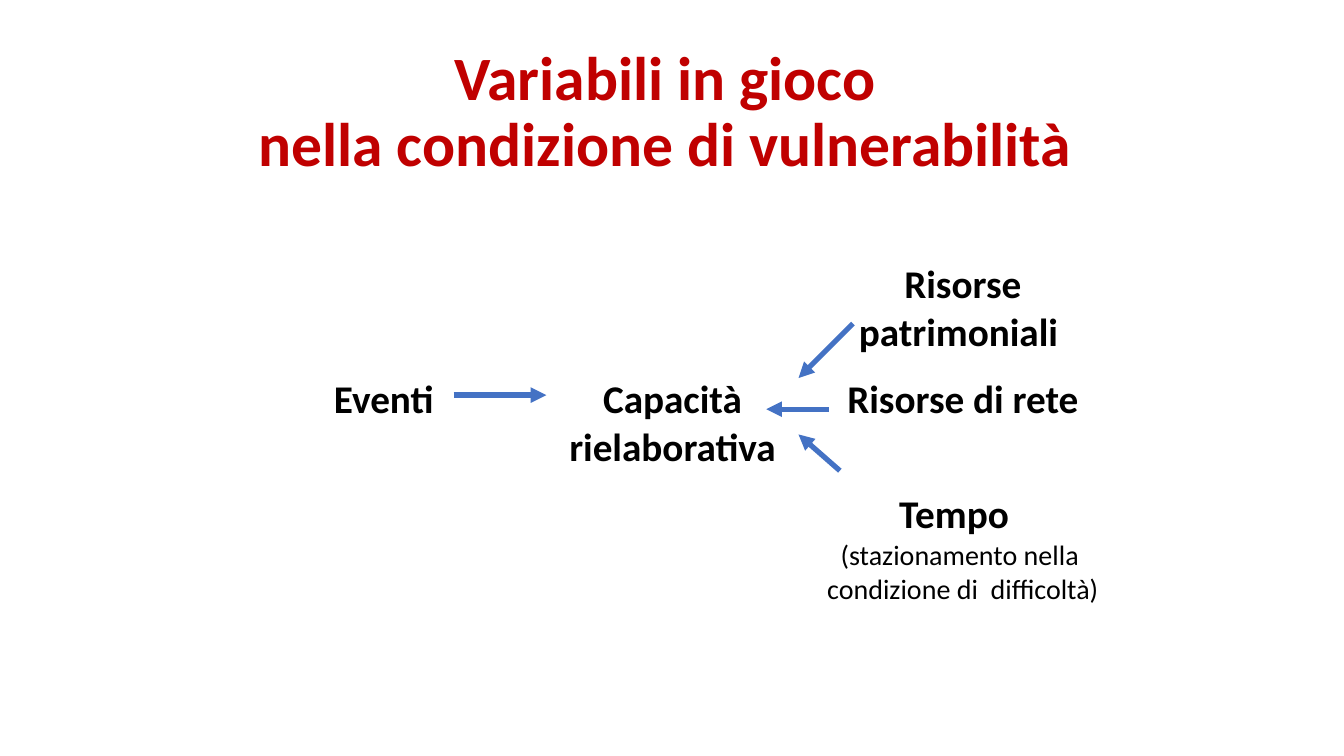
from pptx import Presentation
from pptx.dml.color import RGBColor
from pptx.enum import shapes, text
from pptx.oxml.ns import qn
from pptx.util import Inches, Pt
from lxml import etree

COLORS = {"title": "C00000", "text": "000000", "arrow": "4472C4"}
FONT = "Calibri"

COLS = (2.76, 2.88, 2.88)
ROWS = (1.14, 1.14, 1.24)
# (row, column): paragraphs as (wording, size, bold)
CELLS = {
    (0, 2): [("Risorse patrimoniali ", 28, True)],
    (1, 0): [("Eventi ", 28, True)],
    (1, 1): [("Capacità rielaborativa", 28, True)],
    (1, 2): [("Risorse di rete", 28, True)],
    (2, 2): [("Tempo  ", 28, True),
             ("(stazionamento nella  condizione di  difficoltà)", 20, False)],
}
ARROWS = (
    ((8.46, 3.21), (7.92, 3.75)),
    ((8.22, 4.06), (7.6, 4.06)),
    ((8.33, 4.67), (7.92, 4.31)),
    ((4.5, 3.92), (5.42, 3.92)),
)


def style(para, size, bold, color):
    para.alignment = text.PP_ALIGN.CENTER
    form = {"name": FONT, "size": Pt(size), "bold": bold}
    for run in para.runs:
        for key, value in form.items():
            setattr(run.font, key, value)
        run.font.color.rgb = RGBColor.from_string(COLORS[color])


def add_title(slide, words):
    title = slide.shapes.title
    box = {"left": 0.92, "top": 0.4, "width": 11.5, "height": 1.45}
    for key, value in box.items():
        setattr(title, key, Inches(value))
    frame = title.text_frame
    frame.text = words
    frame.vertical_anchor = text.MSO_ANCHOR.MIDDLE
    para = frame.paragraphs[0]
    para.line_spacing = 0.9
    style(para, 44, True, "title")


def fill_cell(cell, lines):
    cell.fill.background()
    insets = {"left": 0.07, "top": 0.04, "right": 0.07, "bottom": 0.04}
    for side, value in insets.items():
        setattr(cell, f"margin_{side}", Inches(value))
    frame = cell.text_frame
    frame.text = "\n".join(words for words, _, _ in lines)
    for para, (_, size, bold) in zip(frame.paragraphs, lines):
        style(para, size, bold, "text")


def add_grid(slide):
    table = slide.shapes.add_table(
        len(ROWS), len(COLS), Inches(2.47), Inches(2.55),
        Inches(sum(COLS)), Inches(sum(ROWS))).table
    for col, width in zip(table.columns, COLS):
        col.width = Inches(width)
    for row, height in zip(table.rows, ROWS):
        row.height = Inches(height)
    for r in range(len(ROWS)):
        for c in range(len(COLS)):
            fill_cell(table.cell(r, c), CELLS.get((r, c), []))


def add_arrow(slide, start, end):
    ends = [Inches(value) for value in start + end]
    arrow = slide.shapes.add_connector(shapes.MSO_CONNECTOR.STRAIGHT, *ends)
    arrow.line.color.rgb = RGBColor.from_string(COLORS["arrow"])
    arrow.line.width = Pt(3.75)
    line = arrow.line._get_or_add_ln()
    etree.SubElement(line, qn("a:tailEnd"), type="triangle")
    etree.SubElement(arrow._element.spPr, qn("a:effectLst"))


def main():
    deck = Presentation()
    deck.slide_width, deck.slide_height = Inches(13.33), Inches(7.5)
    slide = deck.slides.add_slide(deck.slide_layouts[5])
    add_title(slide, "Variabili in gioco \vnella condizione di vulnerabilità ")
    add_grid(slide)
    for start, end in ARROWS:
        add_arrow(slide, start, end)
    deck.save("out.pptx")


if __name__ == "__main__":
    main()
